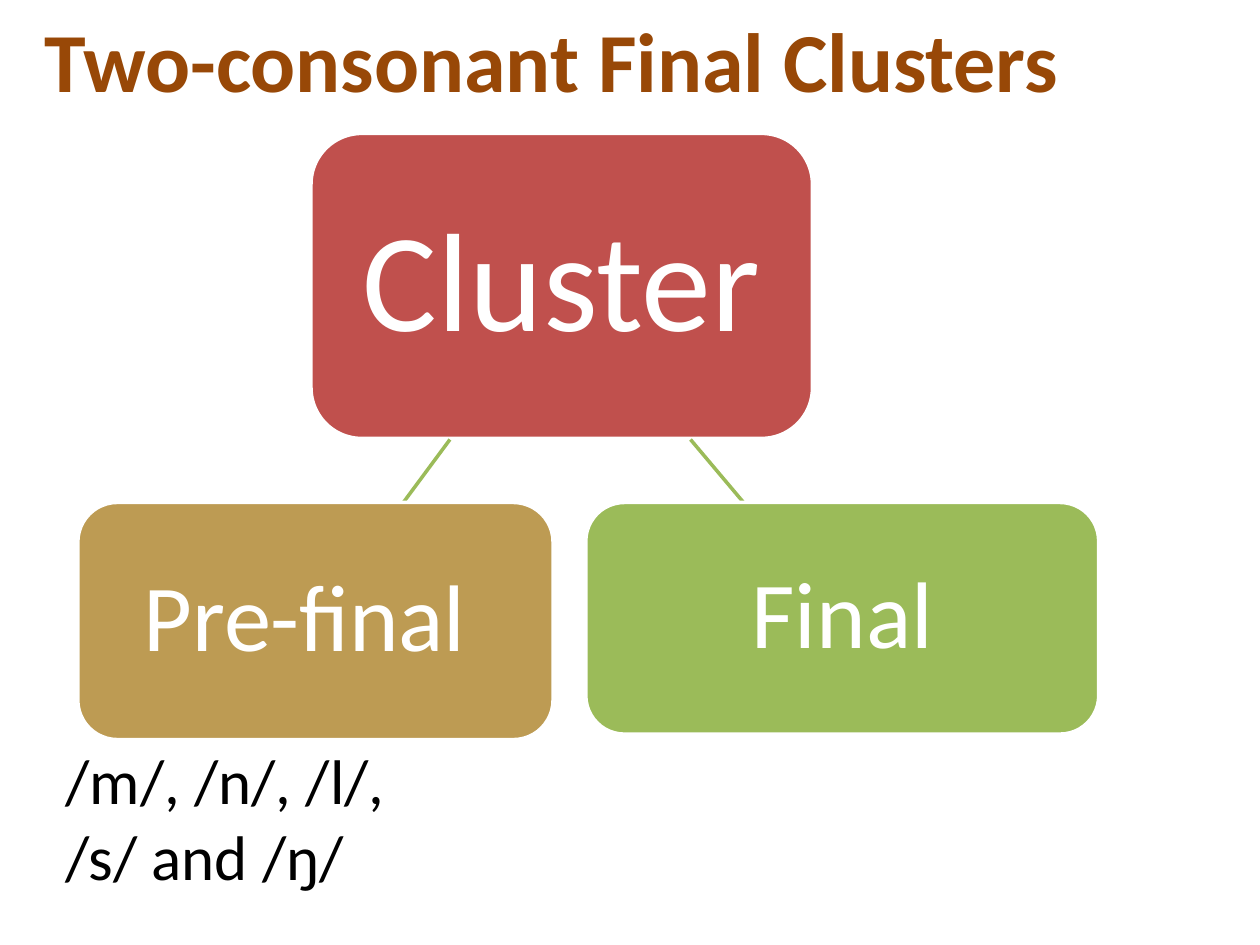
from lxml import etree
from pptx import Presentation
from pptx import util as u
from pptx.dml.color import RGBColor
from pptx.enum import shapes, text

WHITE, GREEN = "FFFFFF", "9BBB59"


def paint(hue):
    return RGBColor.from_string(hue)


class Deck:
    """Holds the style and the current slide."""
    font = "Calibri"
    line = u.Pt(2)

    def __init__(self, slide):
        self.slide = slide

    def label(self, para, words, size, hue, bold=False):
        run = para.add_run()
        run.text = words
        run.font.name = self.font
        run.font.size = u.Pt(size)
        run.font.bold = bold
        run.font.color.rgb = paint(hue)

    def title(self, words, x, y, w, h):
        head = self.slide.shapes.title
        head.left, head.top, head.width, head.height = map(u.Cm, (x, y, w, h))
        frame = head.text_frame
        frame.auto_size = text.MSO_AUTO_SIZE.NONE
        frame.vertical_anchor = text.MSO_ANCHOR.TOP
        para = frame.paragraphs[0]
        para.alignment = text.PP_ALIGN.LEFT
        self.label(para, words, 48, "984807", True)

    def node(self, words, size, hue, inset, x, y, w, h):
        box = self.slide.shapes.add_shape(
            shapes.MSO_SHAPE.ROUNDED_RECTANGLE, *map(u.Cm, (x, y, w, h)))
        box.shadow.inherit = False
        box.fill.solid()
        box.fill.fore_color.rgb = paint(hue)
        box.line.color.rgb = paint(WHITE)
        box.line.width = self.line
        frame = box.text_frame
        frame.word_wrap = True
        frame.vertical_anchor = text.MSO_ANCHOR.MIDDLE
        frame.margin_left = frame.margin_right = u.Cm(inset)
        frame.margin_top = frame.margin_bottom = u.Cm(inset)
        para = frame.paragraphs[0]
        para.alignment = text.PP_ALIGN.CENTER
        para.line_spacing = 0.9
        self.label(para, words, size, WHITE)

    def link(self, *ends):
        edge = self.slide.shapes.add_connector(
            shapes.MSO_CONNECTOR.STRAIGHT, *map(u.Cm, ends))
        edge.line.color.rgb = paint(GREEN)
        edge.line.width = self.line
        props = edge.element.spPr
        space = props.nsmap["a"]
        etree.SubElement(props, f"{{{space}}}effectLst")

    def note(self, words, x, y, w, h):
        box = self.slide.shapes.add_textbox(*map(u.Cm, (x, y, w, h)))
        box.text_frame.word_wrap = True
        self.label(box.text_frame.paragraphs[0], words, 36, "000000")


def main():
    show = Presentation()
    show.slide_width, show.slide_height = u.Cm(25.4), u.Cm(19.05)
    deck = Deck(show.slides.add_slide(show.slide_layouts[5]))
    deck.title("Two-consonant Final Clusters", 0.64, 0.05, 24.13, 2.5)

    row = 10.13
    deck.node("Cluster ", 80, "C0504D", 0.56, 6.27, 2.69, 10.11, 6.15)
    for start, end in ((9.07, 8.13), (13.92, 14.99)):
        deck.link(start, 8.86, end, row)
    deck.node("Pre-final ", 54, "BD9B53", 0.38, 1.57, row, 9.58, 4.78)
    deck.node("Final", 54, GREEN, 0.38, 11.81, row, 10.34, 4.67)
    deck.note("/m/, /n/, /l/, /s/ and /ŋ/", 1.07, 14.83, 8.46, 3.33)
    show.save("out.pptx")


if __name__ == "__main__":
    main()
